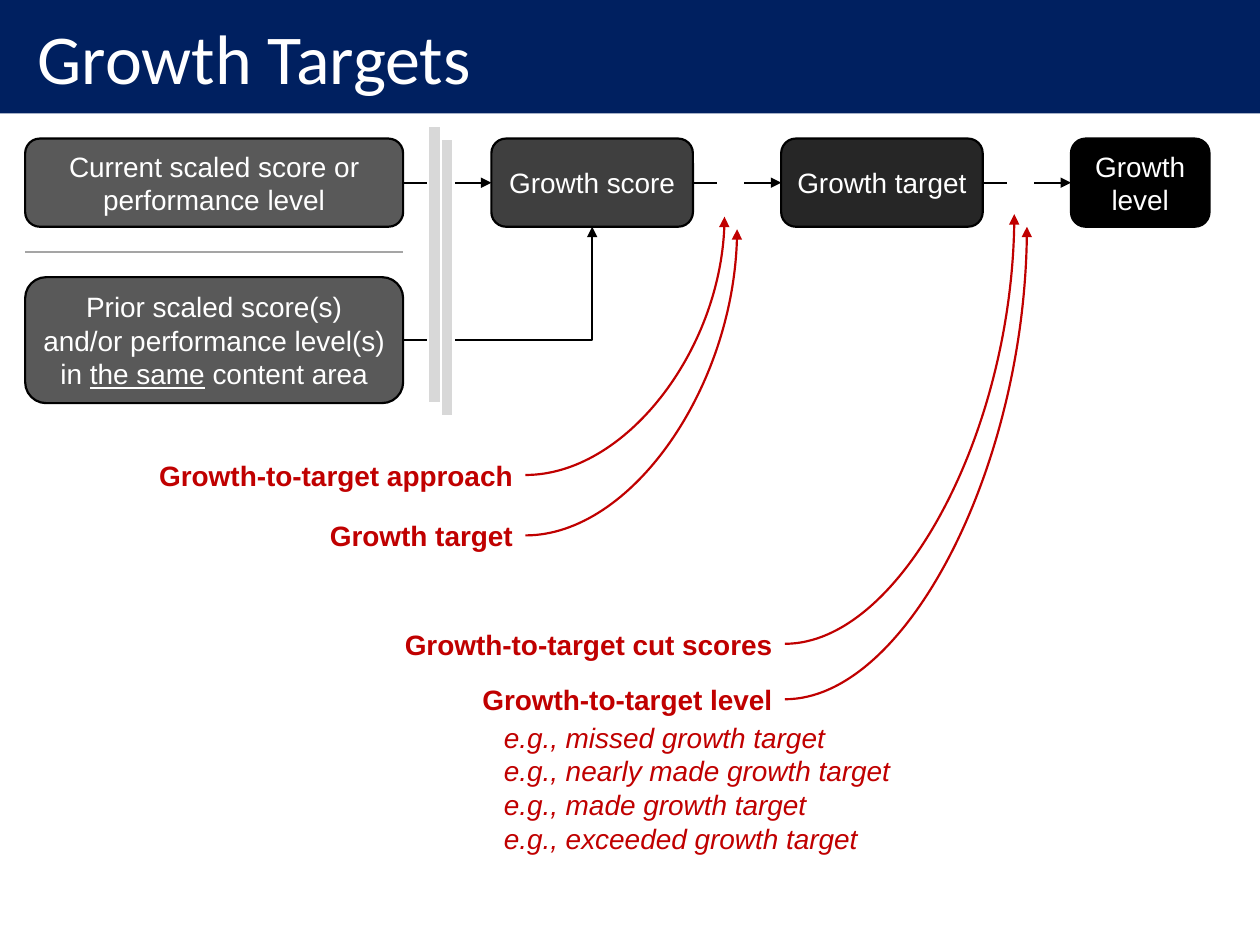
from lxml.etree import SubElement
from pptx import Presentation
from pptx.dml.color import RGBColor
from pptx.enum.shapes import MSO_CONNECTOR as LINK, MSO_SHAPE as SHAPE
from pptx.enum.text import MSO_ANCHOR as ANCHOR, PP_ALIGN as ALIGN
from pptx.oxml.ns import qn
from pptx.util import Inches, Pt

TITLE = "Growth Targets"
BLACK, WHITE, RED, NAVY = "000000", "FFFFFF", "C00000", "002060"
LIGHT, RULE = "D8D8D8", "A5A5A5"
BOXES = {
    "now": ((0.2, 1.1, 3, 0.7), "595959",
            [["Current scaled score or"], ["performance level"]]),
    "prior": ((0.2, 2.2, 3, 1), "595959",
              [["Prior scaled score(s)"], ["and/or performance level(s)"],
               ["in ", ("the same", "underline"), " content area"]]),
    "score": ((3.9, 1.1, 1.6, 0.7), "3F3F3F", [["Growth score"]]),
    "target": ((6.2, 1.1, 1.6, 0.7), "262626", [["Growth target"]]),
    "level": ((8.5, 1.1, 1.1, 0.7), BLACK, [["Growth"], ["level"]]),
}
FLOWS = [("now", "score"), ("score", "target"), ("target", "level")]
BARS = {"wall": (3.4, 1, 2.2, LIGHT), "first": (5.7, 1.02, 0.7, WHITE),
        "last": (8, 1, 0.7, WHITE)}
LABELS = [
    ("Growth-to-target approach", (1.1, 3.57, 3.07, 0.4), "first", 0),
    ("Growth target", (1.1, 4.05, 3.07, 0.4), "first", 1),
    ("Growth-to-target cut scores", (2.82, 4.91, 3.41, 0.4), "last", 0),
    ("Growth-to-target level", (2.82, 5.35, 3.41, 0.4), "last", 1),
]
CASES = ["missed", "nearly made", "made", "exceeded"]
TOP, LEFT, BOTTOM, RIGHT = range(4)


def rgb(code):
    """Turn a hex string into a colour."""
    return RGBColor.from_string(code)


def write(shape, rows, color, align, pads, size=16, font="Arial", style=None):
    """Fill a shape with paragraphs of runs."""
    frame = shape.text_frame
    frame.word_wrap = True
    frame.vertical_anchor = ANCHOR.MIDDLE
    (frame.margin_left, frame.margin_top,
     frame.margin_right, frame.margin_bottom) = map(Inches, pads)
    for i, row in enumerate(rows):
        para = frame.add_paragraph() if i else frame.paragraphs[0]
        para.alignment = align
        for part in row:
            text, mark = (part, style) if isinstance(part, str) else part
            run = para.add_run()
            run.text = text
            run.font.size, run.font.name = Pt(size), font
            run.font.color.rgb = rgb(color)
            if mark:
                setattr(run.font, mark, True)


def block(slide, kind, place, fill=None, line=None):
    """Add a preset shape with optional fill and line."""
    shape = slide.shapes.add_shape(kind, *map(Inches, place))
    shape.shadow.inherit = False
    if fill:
        shape.fill.solid()
        shape.fill.fore_color.rgb = rgb(fill)
    else:
        shape.fill.background()
    if line:
        shape.line.color.rgb = rgb(line)
        shape.line.width = Pt(1.25)
    else:
        shape.line.fill.background()
    return shape


def connect(slide, kind, color, ends=(0, 0, 0, 0), start=None, stop=None,
            preset=None):
    """Add a connector, with an arrowhead when it joins two shapes."""
    link = slide.shapes.add_connector(kind, *map(Inches, ends))
    link.line.color.rgb = rgb(color)
    link.line.width = Pt(1.25)
    props = link._element.spPr
    if start:
        link.begin_connect(*start)
        link.end_connect(*stop)
        SubElement(props.find(qn("a:ln")), qn("a:tailEnd"), type="triangle")
    if preset:
        props.find(qn("a:prstGeom")).set("prst", preset)
    SubElement(props, qn("a:effectLst"))


def main():
    """Build the growth targets slide."""
    deck = Presentation()
    deck.slide_width, deck.slide_height = Inches(10), Inches(7.5)
    slide = deck.slides.add_slide(deck.slide_layouts[5])

    title = slide.shapes.title
    title.left, title.top, title.width, title.height = map(
        Inches, (0, 0, 10, 0.9))
    title.fill.solid()
    title.fill.fore_color.rgb = rgb(NAVY)
    write(title, [[TITLE]], WHITE, ALIGN.LEFT, (0.3, 0.05, 0.1, 0.05),
          40, "Calibri")

    boxes = {}
    for name, (place, fill, rows) in BOXES.items():
        boxes[name] = block(slide, SHAPE.ROUNDED_RECTANGLE, place, fill, BLACK)
        write(boxes[name], rows, WHITE, ALIGN.CENTER, (0, 0, 0, 0))

    connect(slide, LINK.STRAIGHT, RULE, (0.2, 2, 3.2, 2))
    for start, stop in FLOWS:
        connect(slide, LINK.STRAIGHT, BLACK, start=(boxes[start], RIGHT),
                stop=(boxes[stop], LEFT))
    connect(slide, LINK.ELBOW, BLACK, start=(boxes["prior"], RIGHT),
            stop=(boxes["score"], BOTTOM), preset="bentConnector2")

    bars = {}
    for name, (x, y, tall, fill) in BARS.items():
        bars[name] = [
            block(slide, SHAPE.FLOWCHART_PROCESS,
                  (x + step, y + step, 0.1, tall), fill, WHITE)
            for step in (0, 0.1)]

    for text, place, name, i in LABELS:
        label = block(slide, SHAPE.FLOWCHART_PROCESS, place)
        write(label, [[text]], RED, ALIGN.RIGHT, (0.1, 0, 0.1, 0),
              style="bold")
        connect(slide, LINK.CURVE, RED, start=(label, RIGHT),
                stop=(bars[name][i], BOTTOM), preset="curvedConnector2")

    cases = block(slide, SHAPE.FLOWCHART_PROCESS, (3.9, 5.65, 3.7, 1.2))
    write(cases, [[f"e.g., {case} growth target"] for case in CASES], RED,
          ALIGN.LEFT, (0.1, 0, 0, 0), style="italic")
    deck.save("out.pptx")


if __name__ == "__main__":
    main()
